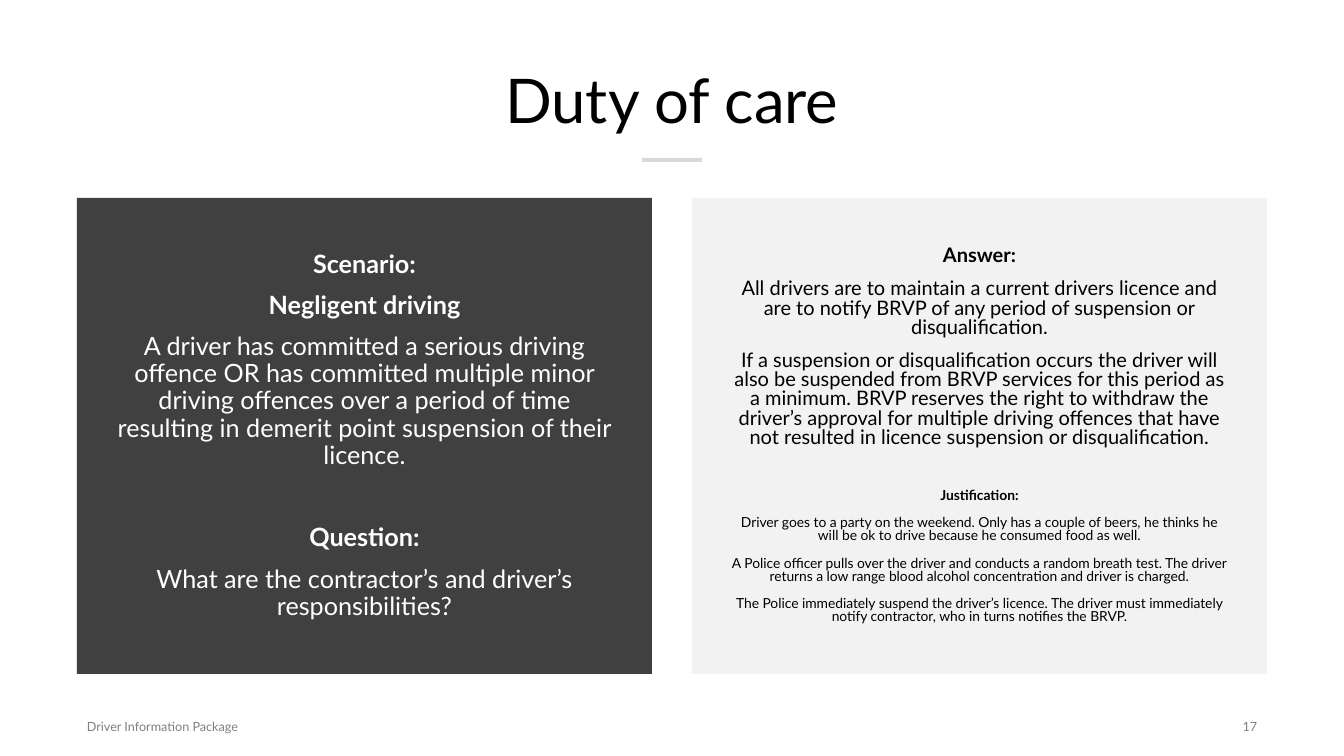
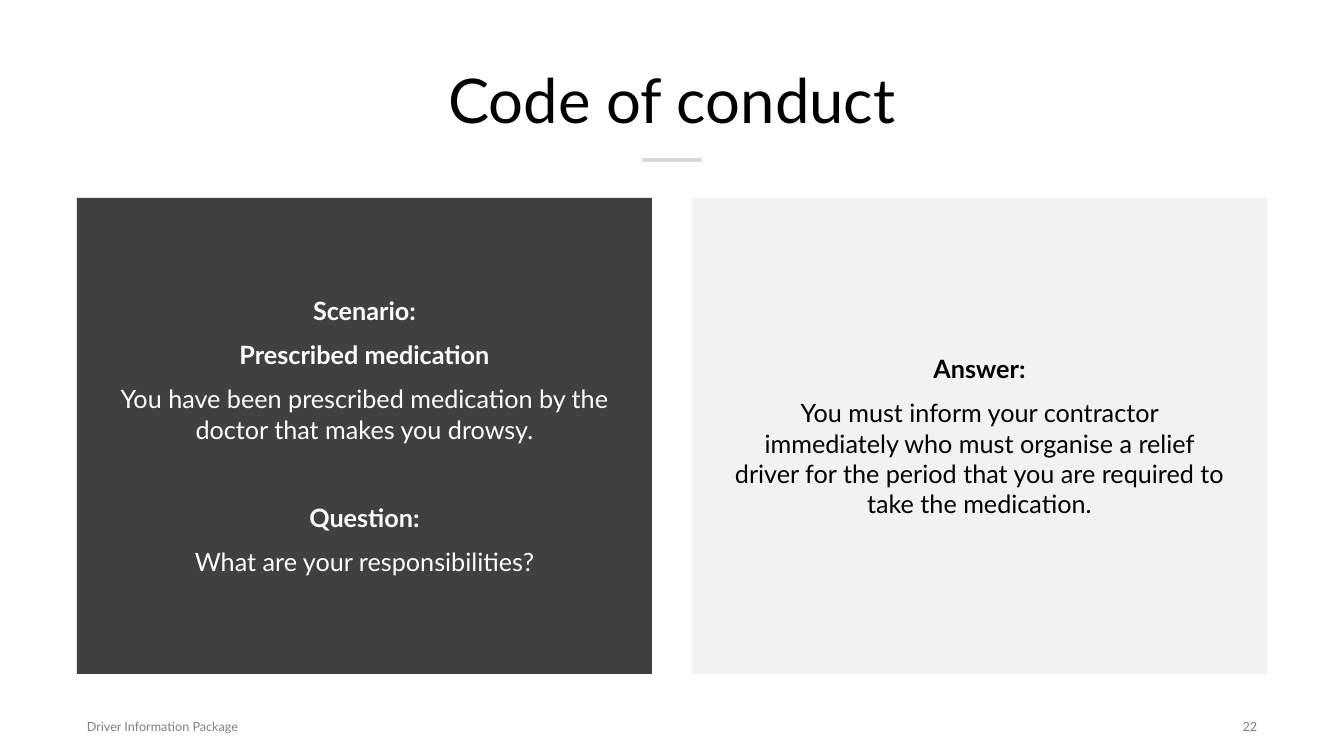
from pptx import Presentation
from pptx.dml.color import RGBColor
from pptx.enum.shapes import MSO_SHAPE
from pptx.enum.text import MSO_ANCHOR, PP_ALIGN
from pptx.util import Emu, Pt

COLOURS = {
    "title": "000000",
    "rule": "D9D9D9",
    "footer": "808080",
    "dark": "404040",
    "light": "F2F2F2",
    "on_dark": "FFFFFF",
    "on_light": "000000",
}
FONT = "Lato"
FOOTER = "Driver Information Package"
PARAGRAPH_GAP = 10
LINE_HEIGHT = 1.2

HEADING, BODY = True, False

SLIDES = [
    {
        "title": "Duty of care",
        "number": "17",
        "scenario": {
            "spacing": 0.9,
            "sections": [
                (18, [
                    (HEADING, "Scenario:"),
                    (HEADING, "Negligent driving"),
                    (BODY, "A driver has committed a serious driving offence OR has committed "
                           "multiple minor driving offences over a period of time resulting in "
                           "demerit point suspension of their licence."),
                ]),
                (18, [
                    (HEADING, "Question:"),
                    (BODY, "What are the contractor’s and driver’s responsibilities?"),
                ]),
            ],
        },
        "answer": {
            "spacing": 0.8,
            "sections": [
                (14.3, [
                    (HEADING, "Answer:"),
                    (BODY, "All drivers are to maintain a current drivers licence and are to "
                           "notify BRVP of any period of suspension or disqualification."),
                    (BODY, "If a suspension or disqualification occurs the driver will also be "
                           "suspended from BRVP services for this period as a minimum. BRVP "
                           "reserves the right to withdraw the driver’s approval for multiple "
                           "driving offences that have not resulted in licence suspension or "
                           "disqualification."),
                ]),
                (9.9, [
                    (HEADING, "Justification:"),
                    (BODY, "Driver goes to a party on the weekend. Only has a couple of beers, he "
                           "thinks he will be ok to drive because he consumed food as well."),
                    (BODY, "A Police officer pulls over the driver and conducts a random breath "
                           "test. The driver returns a low range blood alcohol concentration and "
                           "driver is charged."),
                    (BODY, "The Police immediately suspend the driver’s licence. The driver must "
                           "immediately notify contractor, who in turns notifies the BRVP."),
                ]),
            ],
        },
    },
    {
        "title": "Code of conduct",
        "number": "22",
        "scenario": {
            "spacing": 1.0,
            "sections": [
                (18, [
                    (HEADING, "Scenario:"),
                    (HEADING, "Prescribed medication"),
                    (BODY, "You have been prescribed medication by the doctor that makes you "
                           "drowsy."),
                ]),
                (18, [
                    (HEADING, "Question:"),
                    (BODY, "What are your responsibilities?"),
                ]),
            ],
        },
        "answer": {
            "spacing": 1.0,
            "sections": [
                (18, [
                    (HEADING, "Answer:"),
                    (BODY, "You must inform your contractor immediately who must organise a "
                           "relief driver for the period that you are required to take the "
                           "medication."),
                ]),
            ],
        },
    },
]

SLIDE_W, SLIDE_H = 1344, 756
MARGIN = 77
CONTENT_W = SLIDE_W - 2 * MARGIN
PANEL_GAP, PANEL_INSET = 40, 40
PANEL_W = (CONTENT_W - PANEL_GAP) // 2
PANEL_TOP, PANEL_H = 198, 476
TITLE_TOP, TITLE_H = 40, 118
RULE_W, RULE_H = 60, 4
FOOTER_TOP, FOOTER_H = 707, 40
FOOTER_W, NUMBER_W = 476, 119


def px(length):
    return Emu(round(length * 914400 / 100.8))


def colour(name):
    return RGBColor.from_string(COLOURS[name])


def style(paragraph, size, ink, align, bold=False):
    paragraph.alignment = align
    paragraph.font.name = FONT
    paragraph.font.size = Pt(size)
    paragraph.font.bold = bold
    paragraph.font.color.rgb = colour(ink)


def add_block(slide, left, top, width, height, fill):
    block = slide.shapes.add_shape(
        MSO_SHAPE.RECTANGLE, px(left), px(top), px(width), px(height))
    block.shadow.inherit = False
    block.fill.solid()
    block.fill.fore_color.rgb = colour(fill)
    block.line.fill.background()
    return block


def add_label(slide, text, left, top, width, height, size, ink, align):
    frame = slide.shapes.add_textbox(px(left), px(top), px(width), px(height)).text_frame
    frame.word_wrap = True
    frame.vertical_anchor = MSO_ANCHOR.MIDDLE
    frame.text = text
    style(frame.paragraphs[0], size, ink, align)


def add_panel(slide, left, fill, ink, content):
    frame = add_block(slide, left, PANEL_TOP, PANEL_W, PANEL_H, fill).text_frame
    frame.word_wrap = True
    frame.vertical_anchor = MSO_ANCHOR.MIDDLE
    frame.margin_left = frame.margin_right = px(PANEL_INSET)
    frame.margin_top = frame.margin_bottom = px(PANEL_INSET)
    spacing = content["spacing"]
    paragraph = None
    for section, (size, lines) in enumerate(content["sections"]):
        for position, (bold, text) in enumerate(lines):
            paragraph = frame.add_paragraph() if paragraph else frame.paragraphs[0]
            paragraph.text = text
            style(paragraph, size, ink, PP_ALIGN.CENTER, bold)
            paragraph.line_spacing = spacing
            gap = PARAGRAPH_GAP
            if section and not position:
                gap += PARAGRAPH_GAP + size * LINE_HEIGHT * spacing
            paragraph.space_before = Pt(round(gap, 1))


def add_frame(slide, title, number):
    add_block(slide, (SLIDE_W - RULE_W) / 2, TITLE_TOP + TITLE_H, RULE_W, RULE_H, "rule")
    add_label(slide, title, MARGIN, TITLE_TOP, CONTENT_W, TITLE_H,
              44, "title", PP_ALIGN.CENTER)
    add_label(slide, FOOTER, MARGIN, FOOTER_TOP, FOOTER_W, FOOTER_H,
              9, "footer", PP_ALIGN.LEFT)
    add_label(slide, number, SLIDE_W - MARGIN - NUMBER_W, FOOTER_TOP, NUMBER_W, FOOTER_H,
              9, "footer", PP_ALIGN.RIGHT)


def main():
    deck = Presentation()
    deck.slide_width, deck.slide_height = px(SLIDE_W), px(SLIDE_H)
    for page in SLIDES:
        slide = deck.slides.add_slide(deck.slide_layouts[6])
        add_frame(slide, page["title"], page["number"])
        add_panel(slide, MARGIN, "dark", "on_dark", page["scenario"])
        add_panel(slide, MARGIN + PANEL_W + PANEL_GAP, "light", "on_light", page["answer"])
    deck.save("out.pptx")


if __name__ == "__main__":
    main()
